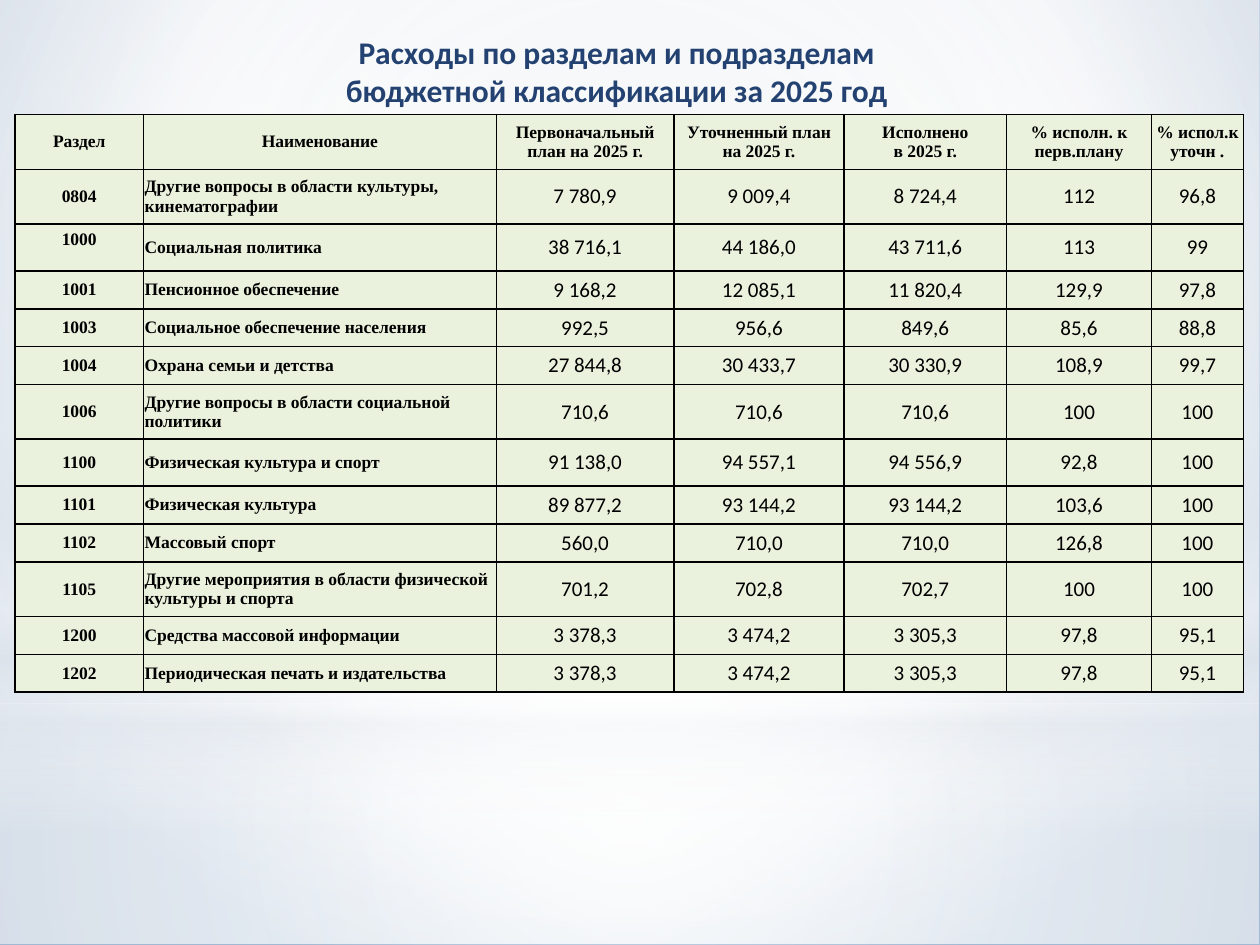
from lxml.etree import SubElement
from pptx import Presentation
from pptx.dml.color import RGBColor
from pptx.enum.shapes import MSO_SHAPE as Preset
from pptx.enum.text import MSO_ANCHOR as Anchor, MSO_AUTO_SIZE as AutoSize, PP_ALIGN as Align
from pptx.oxml.ns import qn
from pptx.util import Pt

COLORS = {"title": "234271", "ink": "000000", "cell": "EAF1DD", "white": "FFFFFF",
          "mist": "E4E9EF", "haze": "D7DFE7", "steel": "A2B9D3"}
CENTER = (50, 50, 50, 50)


def set_gradient(fill, owner, stops, focus=None):
    """Fill with (position, colour, opacity) stops, circular around focus or else downwards."""
    fill.gradient()
    gradient = owner.element.find(".//" + qn("a:gradFill"))
    for child in list(gradient):
        gradient.remove(child)
    stop_list = SubElement(gradient, qn("a:gsLst"))
    for position, color, opacity in stops:
        stop = SubElement(stop_list, qn("a:gs"), pos=str(position * 1000))
        rgb = SubElement(stop, qn("a:srgbClr"), val=COLORS[color])
        if opacity < 100:
            SubElement(rgb, qn("a:alpha"), val=str(opacity * 1000))
    if focus:
        circle = SubElement(gradient, qn("a:path"), path="circle")
        sides = {side: str(share * 1000) for side, share in zip("ltrb", focus)}
        SubElement(circle, qn("a:fillToRect"), **sides)
    else:
        SubElement(gradient, qn("a:lin"), ang="5400000", scaled="0")


def add_text(paragraph, text, font_name, size, color, bold, align=Align.CENTER):
    paragraph.alignment = align
    run = paragraph.add_run()
    run.text = text
    run.font.name = font_name
    run.font.size = Pt(size)
    run.font.bold = bold
    run.font.color.rgb = RGBColor.from_string(COLORS[color])


prs = Presentation()
prs.slide_width, prs.slide_height = Pt(720), Pt(540)
slide = prs.slides.add_slide(prs.slide_layouts[5])

# Backdrop
set_gradient(slide.background.fill, slide,
             [(0, "haze", 100), (60, "white", 100), (100, "steel", 100)], (50, 25, 50, 75))
glows = [
    (Preset.RECTANGLE, 401.8, 137.5,
     [(0, "white", 91), (37, "white", 76), (100, "mist", 79)], CENTER),
    (Preset.RECTANGLE, 0, 401.8,
     [(0, "white", 89), (48, "white", 62), (100, "mist", 79)], CENTER),
    (Preset.RECTANGLE, 296.6, 179.3,
     [(0, "white", 0), (29, "white", 30), (45, "mist", 40), (55, "white", 26),
      (65, "mist", 60), (100, "white", 0)], None),
    (Preset.OVAL, 126, 401.8, [(0, "white", 100), (56, "white", 0)], CENTER),
]
for preset, top, height, stops, focus in glows:
    glow = slide.shapes.add_shape(preset, 0, Pt(top), Pt(719.3), Pt(height))
    glow.shadow.inherit = False
    glow.line.fill.background()
    set_gradient(glow.fill, glow, stops, focus)

# Title, brought in front of the backdrop
title = slide.shapes.title
slide.shapes.element.append(title.element)
title.left, title.top, title.width, title.height = Pt(172.8), Pt(15.1), Pt(359.3), Pt(50.4)
heading = title.text_frame
heading.word_wrap = True
heading.auto_size = AutoSize.SHAPE_TO_FIT_TEXT
heading.vertical_anchor = Anchor.TOP
add_text(heading.paragraphs[0], "Расходы по разделам и подразделам", "Calibri", 18, "title", True)
add_text(heading.add_paragraph(), "бюджетной классификации за 2025 год", "Calibri", 18, "title", True)

# Budget table
LOW, MIDDLE, TALL = 21.6, 26.8, 31.2
column_widths = [73.4, 201.6, 101.5, 97.2, 92.9, 82.8, 52.6]
budget_rows = [
    (TALL, "Раздел", "Наименование", "Первоначальный план на 2025 г.", "Уточненный план\nна 2025 г.",
     "Исполнено\nв 2025 г.", "% исполн. к перв.плану", "% испол.к уточн ."),
    (TALL, "0804", "Другие вопросы в области культуры, кинематографии",
     "7 780,9", "9 009,4", "8 724,4", "112", "96,8"),
    (MIDDLE, "1000", "Социальная политика", "38 716,1", "44 186,0", "43 711,6", "113", "99"),
    (LOW, "1001", "Пенсионное обеспечение", "9 168,2", "12 085,1", "11 820,4", "129,9", "97,8"),
    (LOW, "1003", "Социальное обеспечение населения", "992,5", "956,6", "849,6", "85,6", "88,8"),
    (LOW, "1004", "Охрана семьи и детства", "27 844,8", "30 433,7", "30 330,9", "108,9", "99,7"),
    (TALL, "1006", "Другие вопросы в области социальной политики",
     "710,6", "710,6", "710,6", "100", "100"),
    (MIDDLE, "1100", "Физическая культура и спорт",
     "91 138,0", "94 557,1", "94 556,9", "92,8", "100"),
    (LOW, "1101", "Физическая культура", "89 877,2", "93 144,2", "93 144,2", "103,6", "100"),
    (LOW, "1102", "Массовый спорт", "560,0", "710,0", "710,0", "126,8", "100"),
    (TALL, "1105", "Другие мероприятия в области физической культуры и спорта",
     "701,2", "702,8", "702,7", "100", "100"),
    (LOW, "1200", "Средства массовой информации", "3 378,3", "3 474,2", "3 305,3", "97,8", "95,1"),
    (LOW, "1202", "Периодическая печать и издательства",
     "3 378,3", "3 474,2", "3 305,3", "97,8", "95,1"),
]
budget = slide.shapes.add_table(
    len(budget_rows), len(column_widths), Pt(8.6), Pt(65.5),
    Pt(sum(column_widths)), Pt(sum(row[0] for row in budget_rows))).table
for column, width in zip(budget.columns, column_widths):
    column.width = Pt(width)

for r, (height, *texts) in enumerate(budget_rows):
    budget.rows[r].height = Pt(height)
    for c, text in enumerate(texts):
        cell = budget.cell(r, c)
        cell.margin_left = cell.margin_right = Pt(0.7 if r else 0)
        cell.margin_top = cell.margin_bottom = Pt(3.6)
        cell.vertical_anchor = Anchor.TOP if text == "1000" else Anchor.MIDDLE
        cell.fill.solid()
        cell.fill.fore_color.rgb = RGBColor.from_string(COLORS["cell"])
        properties = cell._tc.get_or_add_tcPr()
        for position, side in enumerate(("lnL", "lnR", "lnT", "lnB")):
            border = SubElement(properties, qn("a:" + side), w=str(Pt(0.96)))
            border_fill = SubElement(border, qn("a:solidFill"))
            SubElement(border_fill, qn("a:srgbClr"), val=COLORS["ink"])
            properties.insert(position, border)

        is_label = r == 0 or c < 2
        font_name, size = ("Times New Roman", 10) if is_label else ("Calibri", 12)
        align = Align.LEFT if r and c == 1 else Align.CENTER
        for n, line in enumerate(text.split("\n")):
            frame = cell.text_frame
            paragraph = frame.add_paragraph() if n else frame.paragraphs[0]
            add_text(paragraph, line, font_name, size, "ink", is_label, align)

prs.save("out.pptx")
